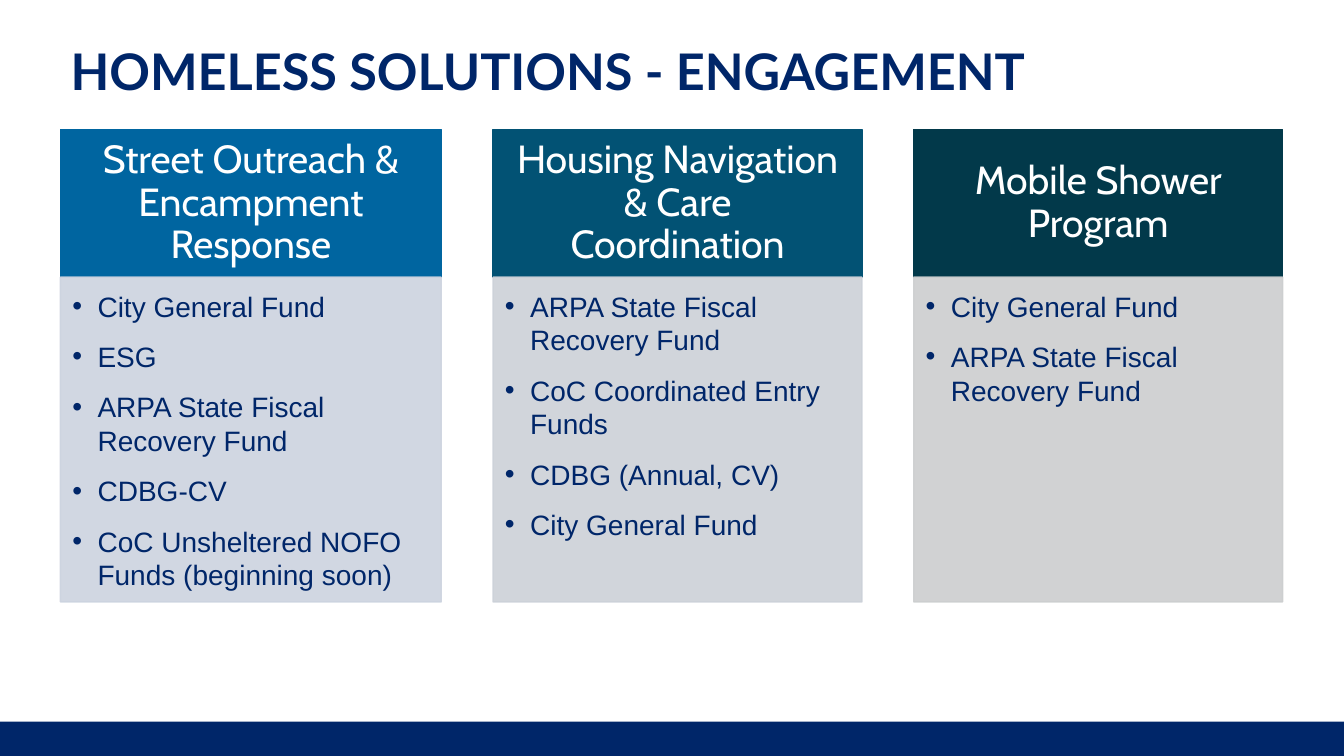
from lxml import etree
from pptx import Presentation
from pptx.dml.color import RGBColor
from pptx.enum.shapes import MSO_SHAPE
from pptx.enum.text import MSO_ANCHOR, MSO_AUTO_SIZE, PP_ALIGN
from pptx.oxml.ns import qn
from pptx.util import Pt

RECTANGLE = MSO_SHAPE.RECTANGLE
TOP, MIDDLE = MSO_ANCHOR.TOP, MSO_ANCHOR.MIDDLE
LEFT, CENTER = PP_ALIGN.LEFT, PP_ALIGN.CENTER
NO_AUTOFIT = MSO_AUTO_SIZE.NONE

NAVY, WHITE = "002669", "FFFFFF"
TITLE = "HOMELESS SOLUTIONS - ENGAGEMENT"
PROGRAMS = [
    {"name": "Street Outreach & Encampment Response", "width": 272,
     "header": "0065A0", "body": "CCD3DF",
     "funds": ["City General Fund", "ESG", "ARPA State Fiscal Recovery Fund",
               "CDBG-CV", "CoC Unsheltered NOFO Funds (beginning soon)"]},
    {"name": "Housing Navigation & Care Coordination", "width": 263.5,
     "header": "025274", "body": "CCD1D8",
     "funds": ["ARPA State Fiscal Recovery Fund", "CoC Coordinated Entry Funds",
               "CDBG (Annual, CV)", "City General Fund"]},
    {"name": "Mobile Shower Program", "width": 263.5,
     "header": "02394A", "body": "CCCECF",
     "funds": ["City General Fund", "ARPA State Fiscal Recovery Fund"]},
]

SLIDE_W, SLIDE_H = 960, 540
MARGIN, GAP = 43.2, 37
HEADER_TOP, HEADER_H, BODY_H = 92.5, 105.5, 232
FOOTER_H = 24.5
BULLET_INDENT = 18


def rgb(hex_color):
    return RGBColor.from_string(hex_color)


def add_panel(slide, left, top, width, height, color, opacity=100):
    panel = slide.shapes.add_shape(RECTANGLE, Pt(left), Pt(top), Pt(width), Pt(height))
    panel.shadow.inherit = False
    panel.fill.solid()
    panel.fill.fore_color.rgb = rgb(color)
    panel.line.color.rgb = rgb(color)
    panel.line.width = Pt(1)
    if opacity < 100:
        for swatch in panel.element.spPr.iter(qn("a:srgbClr")):
            etree.SubElement(swatch, qn("a:alpha"), val=str(opacity * 1000))
    return panel


def add_bullet(paragraph):
    properties = paragraph._p.get_or_add_pPr()
    properties.set("marL", str(Pt(BULLET_INDENT)))
    properties.set("indent", str(-Pt(BULLET_INDENT)))
    etree.SubElement(properties, qn("a:buFont"), typeface="Arial")
    etree.SubElement(properties, qn("a:buChar"), char="•")


def write(shape, lines, *, font, size, color, insets, bold=False, align=LEFT,
          anchor=TOP, line_spacing=1.0, space_after=0, bullets=False):
    frame = shape.text_frame
    frame.word_wrap = True
    frame.auto_size = NO_AUTOFIT
    frame.vertical_anchor = anchor
    (frame.margin_left, frame.margin_top,
     frame.margin_right, frame.margin_bottom) = map(Pt, insets)
    frame.text = "\n".join(lines)
    for paragraph in frame.paragraphs:
        paragraph.alignment = align
        paragraph.line_spacing = line_spacing
        paragraph.space_before = Pt(0)
        paragraph.space_after = Pt(space_after)
        if bullets:
            add_bullet(paragraph)
        paragraph.font.name = font
        paragraph.font.size = Pt(size)
        paragraph.font.bold = bold
        paragraph.font.color.rgb = rgb(color)


def add_program(slide, left, program):
    header = add_panel(slide, left, HEADER_TOP, program["width"], HEADER_H,
                       program["header"])
    write(header, [program["name"]], font="Cabin", size=28, color=WHITE,
          insets=(16, 8.5, 16, 8.5), align=CENTER, anchor=MIDDLE, line_spacing=0.9)
    body = add_panel(slide, left, HEADER_TOP + HEADER_H, program["width"], BODY_H,
                     program["body"], opacity=90)
    write(body, program["funds"], font="Arial", size=20, color=NAVY,
          insets=(8.5, 8.5, 11.5, 12), space_after=12, bullets=True)


def main():
    deck = Presentation()
    deck.slide_width, deck.slide_height = Pt(SLIDE_W), Pt(SLIDE_H)
    slide = deck.slides.add_slide(deck.slide_layouts.get_by_name("Title Only"))

    footer = add_panel(slide, 0, SLIDE_H - FOOTER_H, SLIDE_W, FOOTER_H, NAVY)
    footer.line.fill.background()

    title = slide.shapes.title
    title.left, title.top = Pt(MARGIN), Pt(30)
    title.width, title.height = Pt(742), Pt(81)
    write(title, [TITLE], font="Lato", size=36, color=NAVY, bold=True,
          insets=(7.2, 3.6, 7.2, 3.6), line_spacing=0.9)

    left = MARGIN
    for program in PROGRAMS:
        add_program(slide, left, program)
        left += program["width"] + GAP

    deck.save("out.pptx")


if __name__ == "__main__":
    main()
